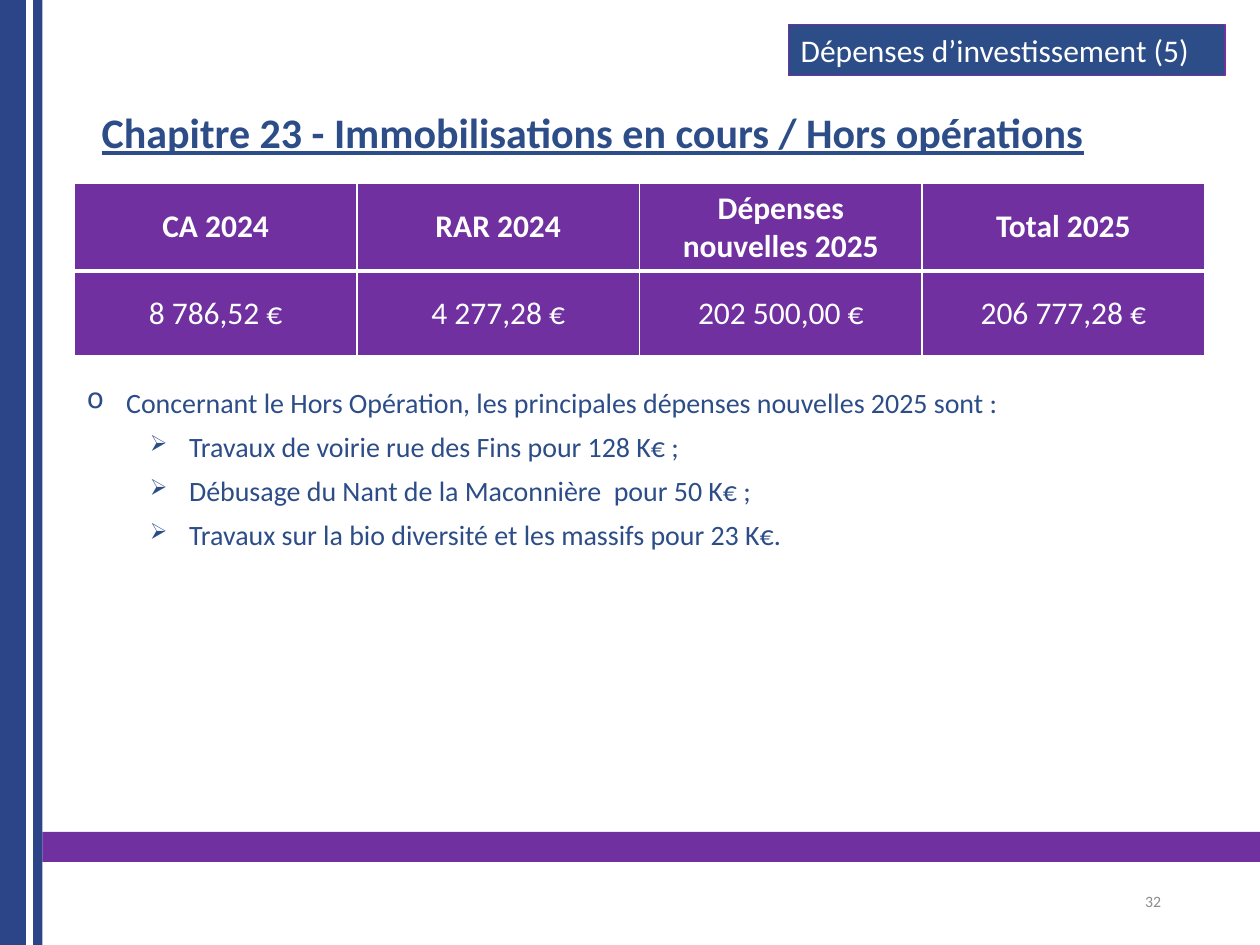
"""Build the budget slide on chapter 23 investment spending."""
from dataclasses import dataclass

import pptx
import pptx.dml.color
import pptx.enum.shapes
import pptx.enum.text
import pptx.oxml
import pptx.oxml.ns
import pptx.util

Pt = pptx.util.Pt
RGBColor = pptx.dml.color.RGBColor
ALIGN = pptx.enum.text.PP_ALIGN
ANCHOR = pptx.enum.text.MSO_ANCHOR

FONT = "Calibri"
PURPLE = RGBColor(0x70, 0x30, 0xA0)
NAVY = RGBColor(0x2C, 0x45, 0x88)
BLUE = RGBColor(0x2C, 0x4D, 0x88)
GREY = RGBColor(0x8C, 0x8C, 0x8C)
WHITE = RGBColor(0xFF, 0xFF, 0xFF)


@dataclass(frozen=True)
class Box:
    left: float
    top: float
    width: float
    height: float

    def lengths(self) -> tuple:
        return tuple(map(Pt, (self.left, self.top, self.width, self.height)))


@dataclass(frozen=True)
class Band:
    box: Box
    color: RGBColor


@dataclass(frozen=True)
class Bullet:
    text: str
    char: str = "➢"
    level: int = 1
    margin: float = 58.5
    scale: int = 80


BANDS = [
    Band(Box(24.2, 475.3, 695.8, 17.2), PURPLE),
    Band(Box(0, 0, 14.8, 540), NAVY),
    Band(Box(19, 0, 5.2, 540), NAVY),
]
HEADER = Box(450.5, 14.2, 249.5, 29)
TITLE = Box(42.5, 60.5, 659, 51)
TABLE = Box(42.5, 104.5, 646, 95.8)
BODY = Box(42.5, 216.7, 646, 204.5)
NUMBER = Box(508.5, 500.5, 162, 28.75)
ROW_HEIGHTS = (47.5, 48.3)
ROWS = [
    ("CA 2024", "RAR 2024", "Dépenses nouvelles 2025", "Total 2025"),
    ("8 786,52 €", "4 277,28 €", "202 500,00 €", "206 777,28 €"),
]
BULLETS = [
    Bullet("Concernant le Hors Opération, les principales dépenses nouvelles 2025 sont :",
           "o", 0, 22.5, 100),
    Bullet("Travaux de voirie rue des Fins pour 128 K€ ;"),
    Bullet("Débusage du Nant de la Maconnière  pour 50 K€ ;"),
    Bullet("Travaux sur la bio diversité et les massifs pour 23 K€."),
]


def write(p, text: str, *, size: float, color: RGBColor, bold: bool = False,
          underline: bool = False, align=ALIGN.LEFT) -> None:
    """Put formatted text into a paragraph."""
    p.alignment = align
    r = p.add_run()
    r.text = text
    font = r.font
    font.name, font.size, font.bold, font.underline = FONT, Pt(size), bold, underline
    font.color.rgb = color


def add_rect(s, box: Box, color: RGBColor):
    """Draw a flat filled rectangle."""
    sp = s.shapes.add_shape(pptx.enum.shapes.MSO_SHAPE.RECTANGLE, *box.lengths())
    sp.shadow.inherit = False
    sp.fill.solid()
    sp.fill.fore_color.rgb = color
    sp.line.fill.background()
    return sp


def add_text_frame(s, box: Box, anchor=ANCHOR.TOP):
    """Add a wrapping text box and return its frame."""
    tf = s.shapes.add_textbox(*box.lengths()).text_frame
    tf.word_wrap = True
    tf.vertical_anchor = anchor
    return tf


def add_element(parent, tag: str, content: str = "", **attrs):
    """Append a DrawingML element to its parent."""
    values = " ".join(f'{k}="{v}"' for k, v in attrs.items())
    ns = pptx.oxml.ns.nsdecls("a")
    parent.append(pptx.oxml.parse_xml(f"<a:{tag} {ns} {values}>{content}</a:{tag}>"))


def add_bullet(p, item: Bullet) -> None:
    """Write one bulleted paragraph."""
    p.level = item.level
    p.space_after = Pt(6)
    pPr = p._p.get_or_add_pPr()
    pPr.set("marL", str(Pt(item.margin)))
    pPr.set("indent", str(-Pt(22.5)))
    add_element(pPr, "buSzPct", val=item.scale * 1000)
    add_element(pPr, "buChar", char=item.char)
    write(p, item.text, size=16, color=BLUE, align=ALIGN.JUSTIFY)


def style_cell(cell, text: str, header: bool) -> None:
    """Write, border and fill one table cell."""
    cell.vertical_anchor = ANCHOR.MIDDLE
    write(cell.text_frame.paragraphs[0], text, size=18, color=WHITE,
          bold=header, align=ALIGN.CENTER)
    tcPr = cell._tc.get_or_add_tcPr()
    widths = {"lnL": 1, "lnR": 1, "lnT": 1 if header else 3, "lnB": 3 if header else 1}
    for tag, width in widths.items():
        fill = f'<a:solidFill><a:srgbClr val="{WHITE}"/></a:solidFill>'
        add_element(tcPr, tag, fill, w=Pt(width))
    cell.fill.solid()
    cell.fill.fore_color.rgb = PURPLE


def add_amounts(s) -> None:
    """Draw the table of amounts."""
    table = s.shapes.add_table(len(ROWS), len(ROWS[0]), *TABLE.lengths()).table
    for column in table.columns:
        column.width = Pt(TABLE.width / len(ROWS[0]))
    for i, values in enumerate(ROWS):
        table.rows[i].height = Pt(ROW_HEIGHTS[i])
        for j, text in enumerate(values):
            style_cell(table.cell(i, j), text, header=i == 0)


def main() -> None:
    """Build and save the slide."""
    prs = pptx.Presentation()
    prs.slide_width, prs.slide_height = Pt(720), Pt(540)
    s = prs.slides.add_slide(prs.slide_layouts[6])
    for band in BANDS:
        add_rect(s, band.box, band.color)

    p = add_text_frame(s, TITLE).paragraphs[0]
    p.line_spacing = 0.9
    p._p.get_or_add_pPr().set("marL", str(Pt(8.6)))
    write(p, "Chapitre 23 - Immobilisations en cours / Hors opérations",
          size=24, color=BLUE, bold=True, underline=True)

    p = add_text_frame(s, NUMBER, ANCHOR.MIDDLE).paragraphs[0]
    write(p, "32", size=9, color=GREY, align=ALIGN.RIGHT)

    tf = add_text_frame(s, BODY)
    for i, item in enumerate(BULLETS):
        add_bullet(tf.add_paragraph() if i else tf.paragraphs[0], item)

    sp = add_rect(s, HEADER, BLUE)
    sp.line.color.rgb = PURPLE
    sp.line.width = Pt(0.75)
    sp.text_frame.word_wrap = True
    sp.text_frame.vertical_anchor = ANCHOR.TOP
    write(sp.text_frame.paragraphs[0], "Dépenses d’investissement (5)", size=18, color=WHITE)

    add_amounts(s)
    prs.save("out.pptx")


if __name__ == "__main__":
    main()
